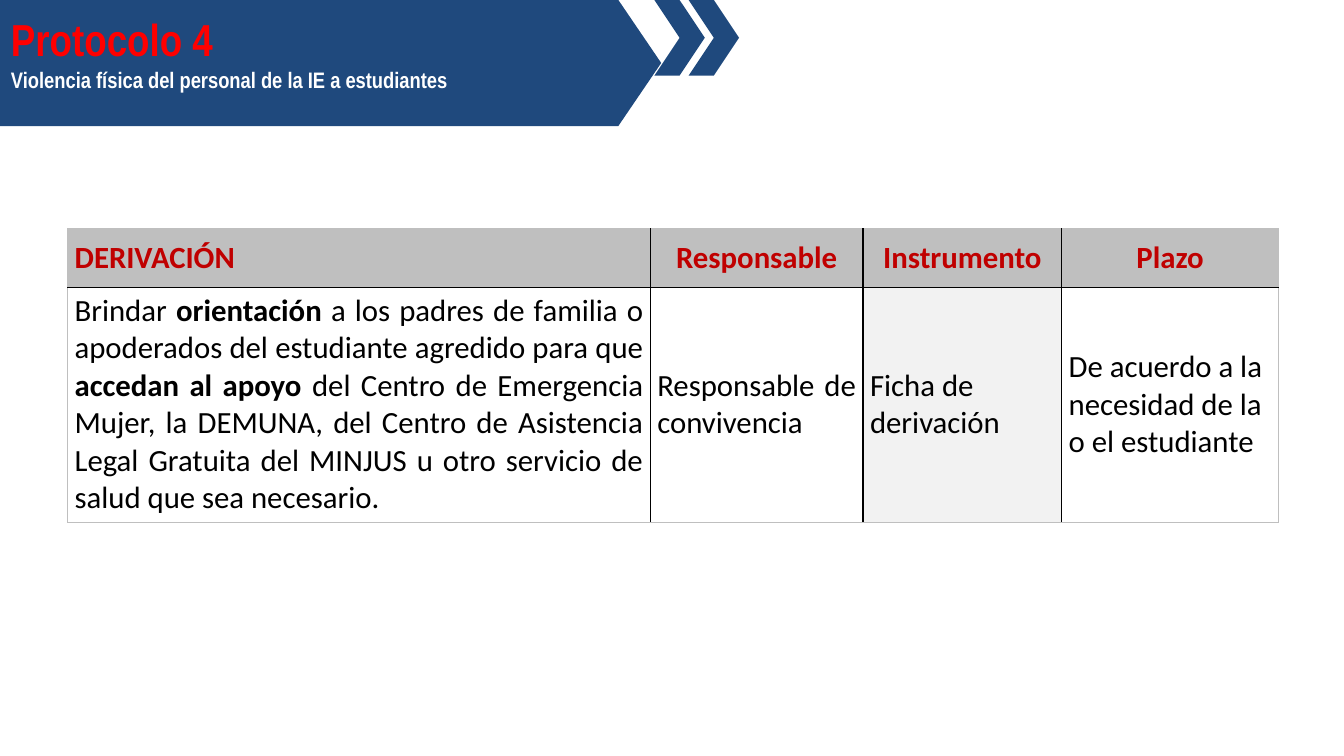
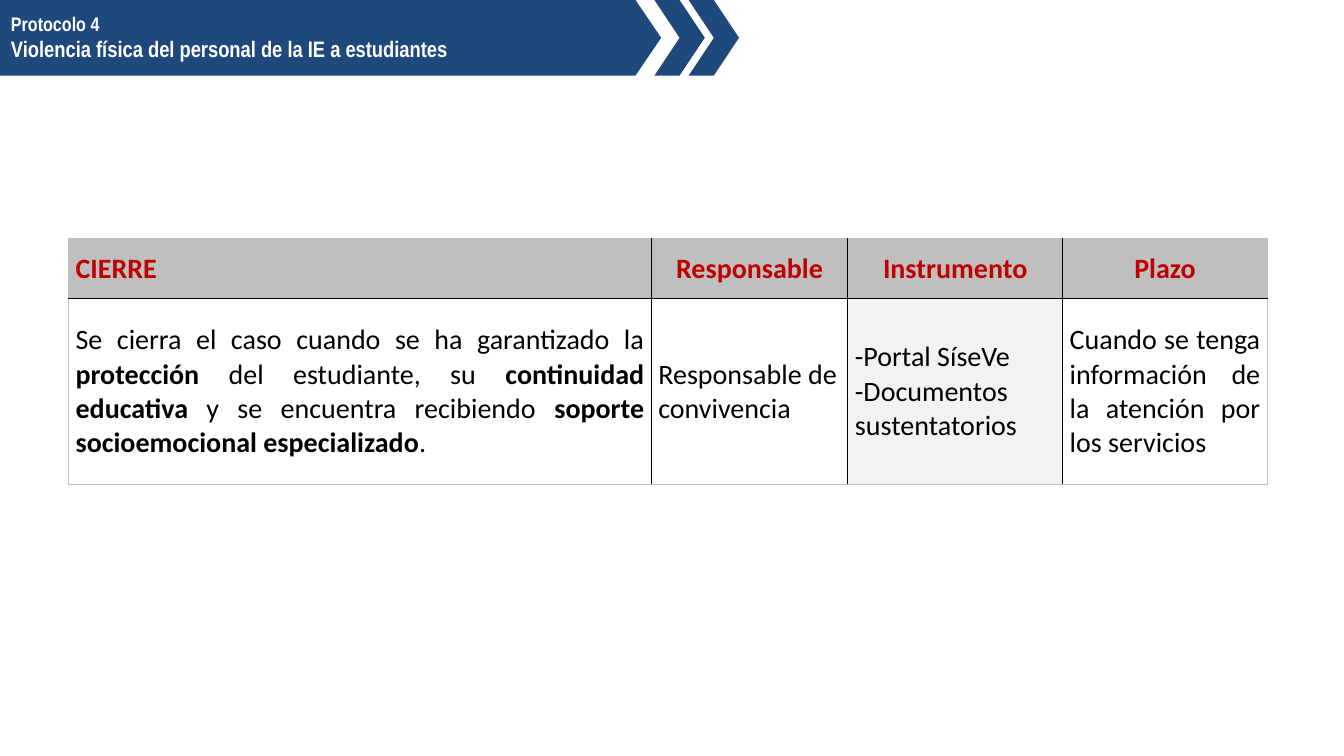
import pptx
import pptx.util
import pptx.dml.color
import pptx.enum.shapes
import pptx.enum.text
from lxml import etree

NAVY, RED, DARK_RED = "1F497D", "FF0000", "C00000"
GRAY, PALE, WHITE, BLACK = "BFBFBF", "F2F2F2", "FFFFFF", "000000"
HEAD_FONT, BODY_FONT = "Arial Narrow", "Calibri"
SUBJECT = "Violencia física del personal de la IE a estudiantes"

SHAPE = pptx.enum.shapes.MSO_SHAPE
ALIGN = pptx.enum.text.PP_ALIGN
LEFT, MID, JUST = ALIGN.LEFT, ALIGN.CENTER, ALIGN.JUSTIFY

deck = pptx.Presentation()
deck.slide_width = pptx.util.Inches(13.33)
deck.slide_height = pptx.util.Inches(7.5)


def col(n):
    """Length of n columns; the slide is 100 columns wide."""
    return round(deck.slide_width * n / 100)


def row(n):
    """Length of n rows; the slide is 100 rows high."""
    return round(deck.slide_height * n / 100)


def box(x, y, w, h):
    return col(x), row(y), col(w), row(h)


def color(code):
    return pptx.dml.color.RGBColor.from_string(code)


def add_run(para, text, font, size, code, bold):
    run = para.add_run()
    run.text = text
    run.font.name = font
    run.font.size = pptx.util.Pt(size)
    run.font.bold = bold
    run.font.color.rgb = color(code)


def add_mark(slide, kind, place):
    mark = slide.shapes.add_shape(kind, *place)
    mark.shadow.inherit = False
    mark.fill.solid()
    mark.fill.fore_color.rgb = color(NAVY)
    mark.line.fill.background()
    return mark


def add_band(slide, high, size, code):
    """Title band of the given height, with its chevrons and two lines of text."""
    for x in (48.69, 51.24):
        add_mark(slide, SHAPE.CHEVRON, box(x, 0, 3.75, 10))
    plate = add_mark(slide, SHAPE.PENTAGON, box(0, 0, 49.2, high))
    plate.adjustments[0] = 0.34
    frame = slide.shapes.add_textbox(*box(0.08, 0.93, 46.65, high - 2)).text_frame
    frame.word_wrap = True
    add_run(frame.paragraphs[0], "Protocolo 4", HEAD_FONT, size, code, True)
    add_run(frame.add_paragraph(), SUBJECT, HEAD_FONT, 16, WHITE, True)


def set_edge(cell, spot, side, code):
    ns = "{http://schemas.openxmlformats.org/drawingml/2006/main}"
    line = etree.Element(ns + "ln" + side, w=str(pptx.util.Pt(1)))
    fill = etree.SubElement(line, ns + "solidFill")
    etree.SubElement(fill, ns + "srgbClr", val=code)
    cell._tc.get_or_add_tcPr().insert(spot, line)


def fill_cell(cell, lines, size, align, head, back):
    """Write the lines; parts between asterisks are bold, and so is a head."""
    cell.vertical_anchor = pptx.enum.text.MSO_ANCHOR.MIDDLE
    cell.margin_left = cell.margin_right = pptx.util.Inches(0.07)
    cell.margin_top = cell.margin_bottom = 0
    if back:
        cell.fill.solid()
        cell.fill.fore_color.rgb = color(back)
    else:
        cell.fill.background()
    frame = cell.text_frame
    for i, line in enumerate(lines):
        para = frame.add_paragraph() if i else frame.paragraphs[0]
        para.alignment = align
        for j, part in enumerate(line.split("*")):
            if part:
                add_run(para, part, BODY_FONT, size,
                        DARK_RED if head else BLACK, head or j % 2 == 1)


def add_step(slide, left, top, wide, high, size, name, body):
    """Table of one step: a gray head over one row of (align, lines) cells."""
    place = box(left, top, sum(wide), sum(high))
    table = slide.shapes.add_table(2, len(wide), *place).table
    table.horz_banding = False
    for part, n in zip(table.columns, wide):
        part.width = col(n)
    for part, n in zip(table.rows, high):
        part.height = row(n)
    heads = [(JUST, [name])]
    heads += [(MID, [text]) for text in ("Responsable", "Instrumento", "Plazo")]
    last = len(wide) - 1
    for r, cells in enumerate((heads, body)):
        for c, (align, lines) in enumerate(cells):
            cell = table.cell(r, c)
            head = r == 0
            back = GRAY if head else PALE if c == 2 else None
            fill_cell(cell, lines, size, align, head, back)
            outer = {"L": c == 0, "R": c == last, "T": head, "B": not head}
            for spot, (side, out) in enumerate(outer.items()):
                set_edge(cell, spot, side, GRAY if out else BLACK)


def new_slide():
    return deck.slides.add_slide(deck.slide_layouts[6])


def add_referral():
    slide = new_slide()
    add_step(slide, 5.03, 30.27, (43.36, 15.83, 14.78, 16.13), (7.73, 31.07), 22,
             "DERIVACIÓN", [
                 (JUST, ["Brindar *orientación* a los padres de familia o "
                         "apoderados del estudiante agredido para que "
                         "*accedan al apoyo *del Centro de Emergencia Mujer, "
                         "la DEMUNA, del Centro de Asistencia Legal Gratuita "
                         "del MINJUS u otro servicio de salud que sea "
                         "necesario."]),
                 (JUST, ["Responsable de convivencia"]),
                 (LEFT, ["Ficha de derivación"]),
                 (LEFT, ["De acuerdo a la necesidad de la o el estudiante"])])
    add_band(slide, 16.67, 32, RED)


def add_closing():
    slide = new_slide()
    add_step(slide, 5.1, 31.6, (43.36, 14.63, 15.98, 15.23), (7.87, 24.67), 20,
             "CIERRE", [
                 (JUST, ["Se cierra el caso cuando se ha garantizado la "
                         "*protección* del estudiante, su *continuidad "
                         "educativa* y se encuentra recibiendo *soporte "
                         "socioemocional especializado*."]),
                 (LEFT, ["Responsable de convivencia"]),
                 (JUST, ["-Portal SíseVe", "-Documentos sustentatorios"]),
                 (JUST, ["Cuando se tenga información de la atención por "
                         "los servicios"])])
    add_band(slide, 10, 14, WHITE)


def main():
    add_referral()
    add_closing()
    deck.save("out.pptx")


if __name__ == "__main__":
    main()
